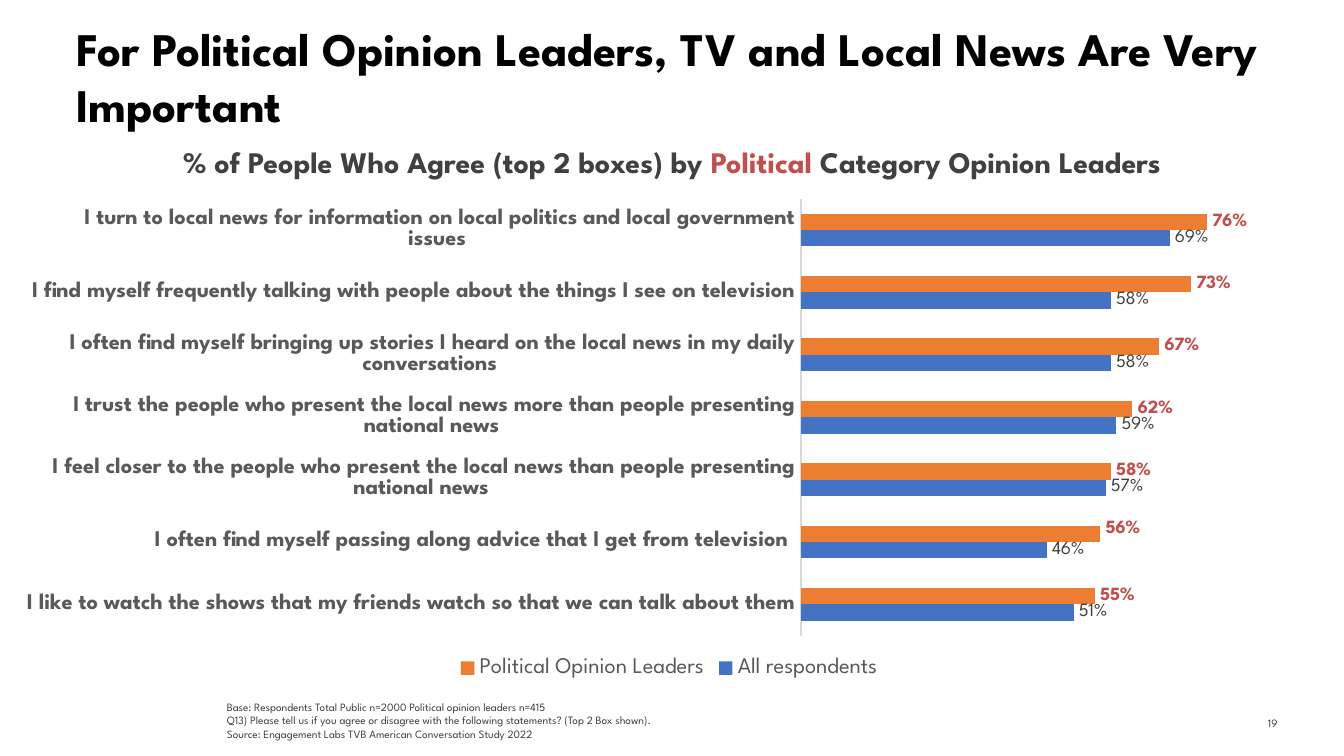
from dataclasses import dataclass

from lxml.etree import SubElement
from pptx import Presentation
from pptx.chart.data import CategoryChartData
from pptx.dml.color import RGBColor
from pptx.enum.chart import (XL_CHART_TYPE, XL_LABEL_POSITION,
                             XL_LEGEND_POSITION, XL_TICK_LABEL_POSITION,
                             XL_TICK_MARK)
from pptx.enum.text import MSO_ANCHOR, PP_ALIGN
from pptx.oxml.ns import qn
from pptx.util import Inches, Pt


@dataclass(frozen=True)
class Theme:
    font: str = "League Spartan"
    black: str = "000000"
    text: str = "404040"
    number: str = "3C3C3A"
    axis_text: str = "595959"
    axis_line: str = "D9D9D9"
    accent: str = "C0504D"
    blue: str = "4472C4"
    orange: str = "ED7D31"
    title_size: float = 25
    heading_size: float = 16
    axis_size: float = 12
    label_size: float = 10
    number_gap_size: float = 8
    note_size: float = 6


THEME = Theme()
CHART_BOX = (0.2, 1.4, 9.53, 3.69)
PLOT_BOX = (5.75, 0.08, 3.19, 3.25)  # inches, measured inside the chart


@dataclass(frozen=True)
class Run:
    text: str
    size: float
    color: str
    bold: bool = False


@dataclass(frozen=True)
class TextBlock:
    box: tuple[float, float, float, float]
    paragraphs: list[list[Run]]
    align: PP_ALIGN = PP_ALIGN.LEFT
    anchor: MSO_ANCHOR = MSO_ANCHOR.TOP
    wrap: bool = True
    top_inset: float = 0.05


@dataclass(frozen=True)
class Series:
    name: str
    values: tuple[float, ...]
    fill: str
    label_color: str
    label_bold: bool = False


NOTES = [
    "Base: Respondents Total Public n=2000 Political opinion leaders n=415",
    "Q13) Please tell us if you agree or disagree with the following statements? (Top 2 Box shown).",
    "Source: Engagement Labs TVB American Conversation Study 2022",
]

BLOCKS = [
    TextBlock((9.04, 5.22, 0.59, 0.3),
              [[Run("19", THEME.note_size, THEME.number),
                Run(" ", THEME.number_gap_size, THEME.number)]],
              PP_ALIGN.RIGHT, MSO_ANCHOR.MIDDLE),
    TextBlock((0.47, 0.15, 9.06, 0.79),
              [[Run("For Political Opinion Leaders, TV and Local News Are Very Important",
                    THEME.title_size, THEME.black, True)]], top_inset=0),
    TextBlock((1.59, 5.16, 8.14, 0.4),
              [[Run(note, THEME.note_size, THEME.text)] for note in NOTES],
              anchor=MSO_ANCHOR.BOTTOM),
    TextBlock((0.77, 1.02, 8.46, 0.37),
              [[Run(text, THEME.heading_size, color, True) for text, color in (
                  ("% of People Who Agree (top 2 boxes) by ", THEME.text),
                  ("Political", THEME.accent),
                  (" Category Opinion Leaders", THEME.text))]],
              PP_ALIGN.CENTER, wrap=False),
]

STATEMENTS = [
    "I like to watch the shows that my friends watch so that we can talk about them ",
    "I often find myself passing along advice that I get from television ",
    "I feel closer to the people who present the local news than people presenting national news ",
    "I trust the people who present the local news more than people presenting national news ",
    "I often find myself bringing up stories I heard on the local news in my daily conversations ",
    "I find myself frequently talking with people about the things I see on television ",
    "I turn to local news for information on local politics and local government issues ",
]

SERIES = [
    Series("All respondents", (0.51, 0.46, 0.57, 0.59, 0.58, 0.58, 0.69),
           THEME.blue, THEME.text),
    Series("Political Opinion Leaders", (0.55, 0.56, 0.58, 0.62, 0.67, 0.73, 0.76),
           THEME.orange, THEME.accent, True),
]


def set_font(font, size: float, color: str, bold: bool = False) -> None:
    for name, value in {"name": THEME.font, "size": Pt(size), "bold": bold}.items():
        setattr(font, name, value)
    font.color.rgb = RGBColor.from_string(color)


def add_text(s, block: TextBlock) -> None:
    tf = s.shapes.add_textbox(*map(Inches, block.box)).text_frame
    frame_format = {"word_wrap": block.wrap, "vertical_anchor": block.anchor,
                    "margin_top": Inches(block.top_inset)}
    for name, value in frame_format.items():
        setattr(tf, name, value)
    for i, runs in enumerate(block.paragraphs):
        p = tf.add_paragraph() if i else tf.paragraphs[0]
        p.alignment = block.align
        for run in runs:
            r = p.add_run()
            r.text = run.text
            set_font(r.font, run.size, run.color, run.bold)


def add_layout(parent, index: int, **values: str) -> None:
    """Put a manual layout into a chart element at the given child index."""
    layout = SubElement(parent, qn("c:layout"))
    manual = SubElement(layout, qn("c:manualLayout"))
    for tag, value in values.items():
        SubElement(manual, qn(f"c:{tag}")).set("val", value)
    parent.insert(index, layout)


def style_series(plot_series, series: Series) -> None:
    plot_series.format.fill.solid()
    plot_series.format.fill.fore_color.rgb = RGBColor.from_string(series.fill)
    labels = plot_series.data_labels
    label_format = {"show_value": True, "number_format": "0%",
                    "number_format_is_linked": False,
                    "position": XL_LABEL_POSITION.OUTSIDE_END}
    for name, value in label_format.items():
        setattr(labels, name, value)
    set_font(labels.font, THEME.label_size, series.label_color, series.label_bold)


def add_agreement_chart(s) -> None:
    data = CategoryChartData(number_format="0%")
    data.categories = STATEMENTS
    for series in SERIES:
        data.add_series(series.name, series.values)
    chart = s.shapes.add_chart(XL_CHART_TYPE.BAR_CLUSTERED,
                               *map(Inches, CHART_BOX), data).chart
    set_font(chart.font, THEME.label_size, THEME.black)
    chart.has_title = False
    chart.has_legend = True
    chart.legend.position = XL_LEGEND_POSITION.BOTTOM
    chart.legend.include_in_layout = False
    set_font(chart.legend.font, THEME.axis_size, THEME.axis_text)

    axis = chart.category_axis
    axis.major_tick_mark = axis.minor_tick_mark = XL_TICK_MARK.NONE
    axis.tick_label_position = XL_TICK_LABEL_POSITION.NEXT_TO_AXIS
    axis.format.line.color.rgb = RGBColor.from_string(THEME.axis_line)
    axis.format.line.width = Pt(0.75)
    set_font(axis.tick_labels.font, THEME.axis_size, THEME.axis_text, True)
    value_format = {"visible": False, "has_major_gridlines": False,
                    "minimum_scale": 0, "maximum_scale": 0.8}
    for name, value in value_format.items():
        setattr(chart.value_axis, name, value)

    plot = chart.plots[0]
    plot.gap_width, plot.overlap, plot.vary_by_categories = 182, 0, False
    for plot_series, series in zip(plot.series, SERIES):
        style_series(plot_series, series)

    # The 56% label sits slightly above its bar.
    leaders = SERIES[1]
    label = plot.series[1].points[1].data_label
    set_font(label.font, THEME.label_size, leaders.label_color, leaders.label_bold)
    label.position = XL_LABEL_POSITION.OUTSIDE_END
    raised = plot.series[1].data_labels._element.find(qn("c:dLbl"))
    add_layout(raised, 1, x="0", y="-0.01")

    area = chart._chartSpace.chart.plotArea
    for old in area.findall(qn("c:layout")):
        area.remove(old)
    left, top, width, height = PLOT_BOX
    chart_width, chart_height = CHART_BOX[2:]
    add_layout(area, 0, layoutTarget="inner", xMode="edge", yMode="edge",
               x=str(left / chart_width), y=str(top / chart_height),
               w=str(width / chart_width), h=str(height / chart_height))


def main() -> None:
    prs = Presentation()
    prs.slide_width = Inches(10)
    prs.slide_height = prs.slide_width * 9 // 16
    s = prs.slides.add_slide(prs.slide_layouts[6])
    for block in BLOCKS:
        add_text(s, block)
    add_agreement_chart(s)
    prs.save("out.pptx")


if __name__ == "__main__":
    main()
